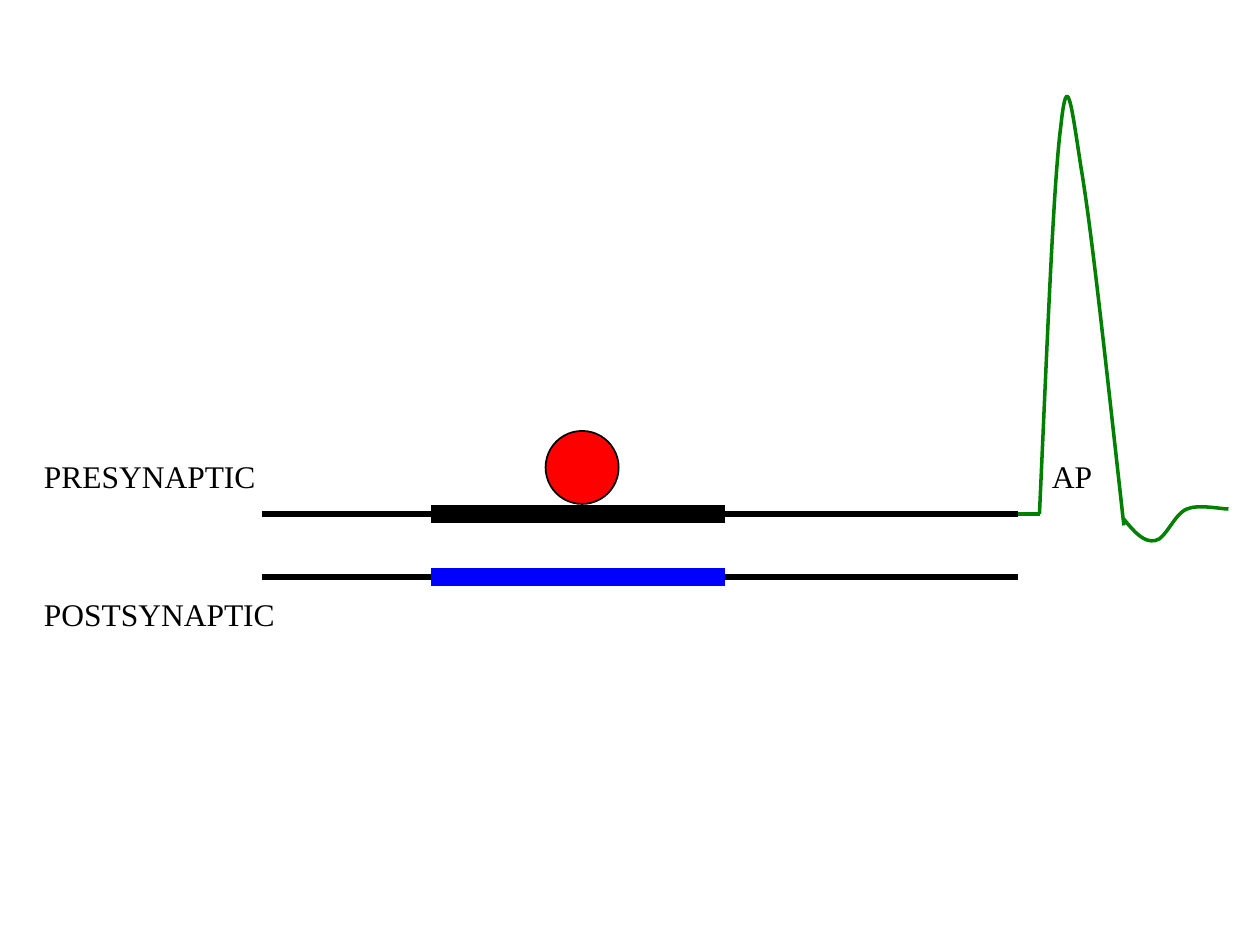
from lxml import etree
from pptx import Presentation
from pptx.dml.color import RGBColor
from pptx.enum import shapes, text
from pptx.oxml.ns import qn
from pptx.util import Inches, Pt

BLACK, BLUE, RED, GREEN = "000000", "0000FF", "FF0000", "008000"


def color(value):
    return RGBColor.from_string(value)


def set_line(sp, value, width):
    sp.line.color.rgb = color(value)
    sp.line.width = Pt(width)


def add_line(slide, x1, x2, y, value, width):
    line = slide.shapes.add_connector(
        shapes.MSO_CONNECTOR.STRAIGHT, Inches(x1), Inches(y), Inches(x2), Inches(y))
    set_line(line, value, width)
    etree.SubElement(line._element.spPr, qn("a:effectLst"))


def add_label(slide, left, top, width, label):
    box = slide.shapes.add_textbox(Inches(left), Inches(top), Inches(width), Inches(0.4))
    tf = box.text_frame
    tf.word_wrap = False
    tf.auto_size = text.MSO_AUTO_SIZE.SHAPE_TO_FIT_TEXT
    tf.text = label
    font = tf.paragraphs[0].runs[0].font
    font.name = "Times New Roman"
    font.size = Pt(18)
    font.color.rgb = color(BLACK)


def add_curve(slide, left, top, points):
    vertices = [(Inches(left + x), Inches(top + y)) for x, y in points]
    builder = slide.shapes.build_freeform(*vertices[0])
    builder.add_line_segments(vertices[1:], close=False)
    sp = builder.convert_to_shape()
    sp.shadow.inherit = False
    sp.fill.background()
    set_line(sp, GREEN, 2)
    segments = sp._element.xpath(".//a:lnTo")
    for i in range(0, len(segments), 3):
        curve = etree.Element(qn("a:cubicBezTo"))
        segments[i].addprevious(curve)
        for segment in segments[i:i + 3]:
            curve.append(segment[0])
            segment.getparent().remove(segment)


def add_membrane(slide, left, top, width, zone_color):
    add_line(slide, left, left + width, top, BLACK, 3)
    add_line(slide, left + 1.34, left + 3.67, top, zone_color, 10)


def add_vesicle(slide, left, top, size):
    sp = slide.shapes.add_shape(
        shapes.MSO_SHAPE.OVAL, Inches(left), Inches(top), Inches(size), Inches(size))
    sp.shadow.inherit = False
    sp.fill.solid()
    sp.fill.fore_color.rgb = color(RED)
    set_line(sp, BLACK, 1)


def add_synapse(slide, left, top, width):
    add_membrane(slide, left, top + 0.5, width, BLUE)
    add_membrane(slide, left, top, width, BLACK)
    add_vesicle(slide, left + 2.25, top - 0.66, 0.58)
    add_label(slide, left - 1.83, top + 0.59, 2.13, "POSTSYNAPTIC")
    add_label(slide, left - 1.83, top - 0.5, 1.97, "PRESYNAPTIC")


def add_action_potential(slide, left, baseline):
    spike = [(0, 0), (0.06, -1.31), (0.11, -2.62), (0.17, -3.08),
             (0.22, -3.54), (0.25, -3.27), (0.33, -2.75),
             (0.42, -2.22), (0.54, -1.07), (0.67, 0.09)]
    recovery = [(0.67, 0.04), (0.75, 0.14), (0.83, 0.23), (0.92, 0.21),
                (1, 0.2), (1.07, 0), (1.17, -0.04),
                (1.26, -0.08), (1.44, -0.04), (1.5, -0.04)]
    for points in (spike, recovery):
        add_curve(slide, left, baseline, points)
    add_line(slide, left - 0.17, left, baseline, GREEN, 2)
    add_label(slide, left, baseline - 0.5, 0.53, "AP")


def main():
    prs = Presentation()
    prs.slide_width, prs.slide_height = Inches(10), Inches(7.5)
    slide = prs.slides.add_slide(prs.slide_layouts[6])
    add_synapse(slide, 2.08, 4.08, 6)
    add_action_potential(slide, 8.25, 4.08)
    prs.save("out.pptx")


if __name__ == "__main__":
    main()
